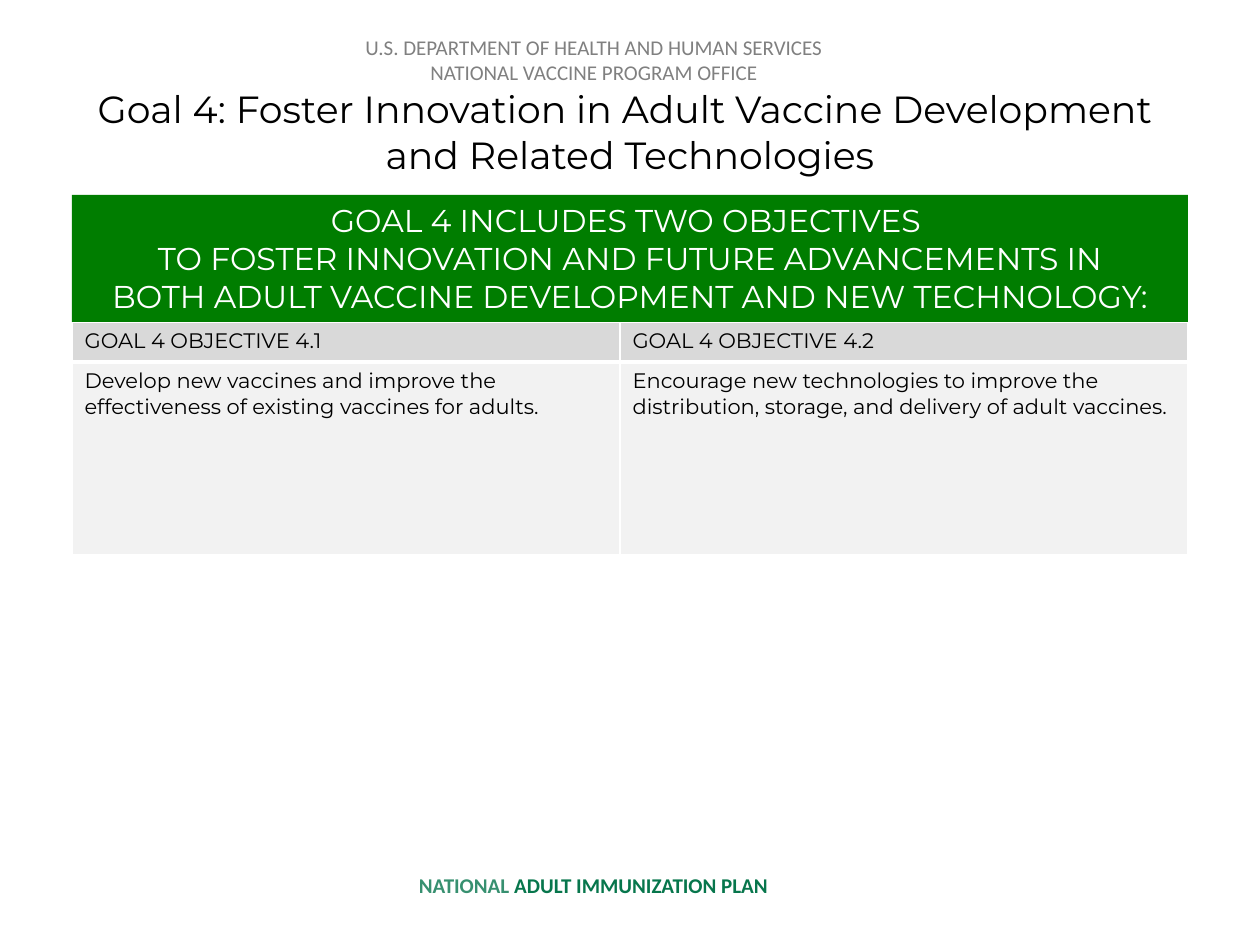
from lxml.etree import SubElement
from pptx import Presentation
from pptx.dml.color import RGBColor
from pptx.enum.shapes import MSO_SHAPE
from pptx.enum.text import MSO_ANCHOR, PP_ALIGN
from pptx.oxml.ns import qn
from pptx.util import Pt

PX = 914400 / 126


def px(*lengths):
    return [round(length * PX) for length in lengths]


def write(frame, paragraphs, size, font, align=PP_ALIGN.CENTER):
    """Each paragraph is a list of (text, colour, bold) runs; None is a line break."""
    frame.word_wrap = True
    for index, runs in enumerate(paragraphs):
        paragraph = frame.paragraphs[0] if index == 0 else frame.add_paragraph()
        paragraph.alignment = align
        for part in runs:
            if part is None:
                paragraph.add_line_break()
                continue
            text, colour, bold = part
            run = paragraph.add_run()
            run.text = text
            run.font.size = Pt(size)
            run.font.name = font
            run.font.bold = bold
            run.font.color.rgb = RGBColor.from_string(colour)


prs = Presentation()
prs.slide_width, prs.slide_height = px(1260, 945)
slide = prs.slides.add_slide(prs.slide_layouts[6])
shapes = slide.shapes

# Footer, office header and title
footer = [("NATIONAL ", "379070", True), ("ADULT IMMUNIZATION PLAN", "07764C", True)]
office = [("U.S. DEPARTMENT OF HEALTH AND HUMAN SERVICES", "808080", False), None,
          ("NATIONAL VACCINE PROGRAM OFFICE", "808080", False)]
title = [("Goal 4: Foster Innovation in Adult Vaccine Development ", "000000", False), None,
         ("and Related Technologies", "000000", False)]
for box, runs, size, font, anchor in [
    ((319, 866, 549, 38), footer, 12, "Calibri", MSO_ANCHOR.TOP),
    ((266, 28, 656, 63), office, 12, "Calibri", MSO_ANCHOR.TOP),
    ((63, 88, 1134, 87), title, 21.6, "Montserrat", MSO_ANCHOR.MIDDLE),
]:
    frame = shapes.add_textbox(*px(*box)).text_frame
    frame.vertical_anchor = anchor
    write(frame, [runs], size, font)

# Objectives table
objectives = [
    ("GOAL 4 OBJECTIVE 4.1",
     "Develop new vaccines and improve the effectiveness of existing vaccines for adults."),
    ("GOAL 4 OBJECTIVE 4.2",
     "Encourage new technologies to improve the distribution, storage, "
     "and delivery of adult vaccines."),
]
column_widths = px(548, 568)
row_heights = px(40, 193)
row_fills = ["D9D9D9", "F2F2F2"]
table = shapes.add_table(2, 2, *px(72, 322, 1116, 233)).table
for column, (width, objective) in enumerate(zip(column_widths, objectives)):
    table.columns[column].width = width
    for row, text in enumerate(objective):
        table.rows[row].height = row_heights[row]
        cell = table.cell(row, column)
        write(cell.text_frame, [[(text, "000000", False)]], 12, "Montserrat", PP_ALIGN.LEFT)

        # White borders, thicker between heading and description
        properties = cell._tc.get_or_add_tcPr()
        for side in ("L", "R", "T", "B"):
            heading_rule = (row, side) in [(0, "B"), (1, "T")]
            border = SubElement(properties, qn(f"a:ln{side}"), w=str(Pt(3 if heading_rule else 1)))
            SubElement(SubElement(border, qn("a:solidFill")), qn("a:srgbClr"), val="FFFFFF")
        cell.fill.solid()
        cell.fill.fore_color.rgb = RGBColor.from_string(row_fills[row])

# Green goal banner
banner = shapes.add_shape(MSO_SHAPE.RECTANGLE, *px(72, 195, 1116, 127))
banner.shadow.inherit = False
banner.fill.solid()
banner.fill.fore_color.rgb = RGBColor.from_string("007D00")
banner.line.fill.background()
banner.text_frame.vertical_anchor = MSO_ANCHOR.TOP
banner_lines = [
    "GOAL 4 INCLUDES TWO OBJECTIVES ",
    "TO FOSTER INNOVATION AND FUTURE ADVANCEMENTS IN",
    " BOTH ADULT VACCINE DEVELOPMENT AND NEW TECHNOLOGY: ",
]
write(banner.text_frame, [[(line, "FFFFFF", False)] for line in banner_lines], 18, "Montserrat")

prs.save("out.pptx")
